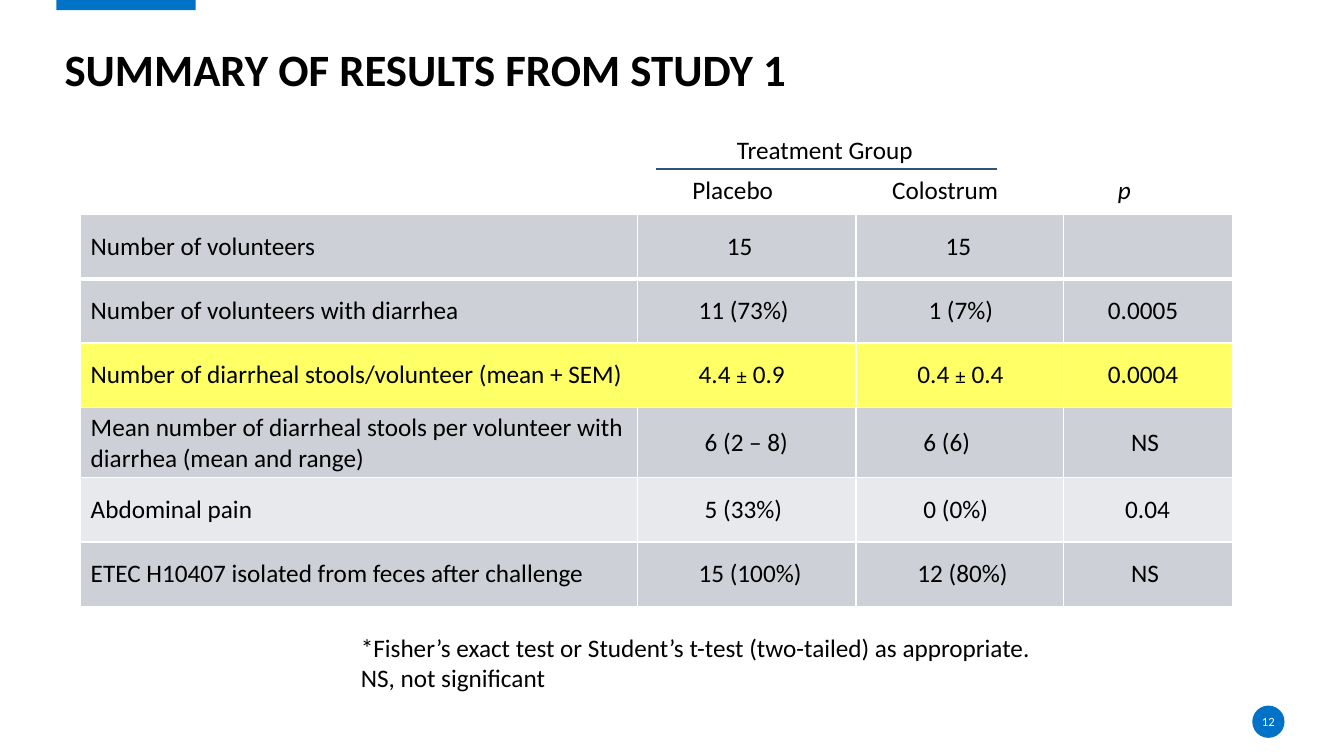
import pptx
import pptx.util
import pptx.dml.color
import pptx.oxml
import pptx.oxml.ns
import pptx.enum.shapes
import pptx.enum.text
from lxml import etree

SCALE = 9144  # EMU in one px, 100 px to the inch
BLUE, WHITE, BLACK = "0072C7", "FFFFFF", "000000"
GREY, PALE, YELLOW = "CDD1D7", "E8E9EC", "FFFF66"
MID = pptx.enum.text.MSO_ANCHOR.MIDDLE
TOP = pptx.enum.text.MSO_ANCHOR.TOP
SHAPE = pptx.enum.shapes.MSO_SHAPE


def px(*vals):
    return [pptx.util.Emu(val * SCALE) for val in vals]


def color(code):
    return pptx.dml.color.RGBColor.from_string(code)


def sub(parent, tag, **attrs):
    return etree.SubElement(parent, pptx.oxml.ns.qn(tag), attrs)


class Deck:
    face = "Calibri"
    size = 18

    def __init__(self, wide, high):
        self.prs = pptx.Presentation()
        self.prs.slide_width, self.prs.slide_height = px(wide, high)
        self.slide = self.prs.slides.add_slide(self.prs.slide_layouts[6])
        self.shapes = self.slide.shapes

    def style(self, font, size=None, ink=BLACK, bold=False):
        font.name, font.size = self.face, pptx.util.Pt(size or self.size)
        font.color.rgb, font.bold = color(ink), bold

    def fill_para(self, para, text, tabs=(), **look):
        """Fill a paragraph; text is a string or a list of (string, font overrides)."""
        if tabs:
            stops = sub(para._p.get_or_add_pPr(), "a:tabLst")
            for stop in tabs:
                sub(stops, "a:tab", pos=str(stop * SCALE), algn="l")
        self.style(para.font, **look)
        for part, diff in [(text, {})] if isinstance(text, str) else text:
            run = para.add_run()
            run.text = part
            if "size" in diff:
                run.font.size = pptx.util.Pt(diff["size"])
            if "name" in diff:
                run.font.name = diff["name"]
            run.font.bold = diff.get("bold")
            run.font.italic = diff.get("italic")

    def text(self, box, lines, inset=(10, 5), anchor=TOP, tabs=(), **look):
        frame = self.shapes.add_textbox(*px(*box)).text_frame
        frame.word_wrap, frame.vertical_anchor = True, anchor
        frame.margin_left = frame.margin_right = px(inset[0])[0]
        frame.margin_top = frame.margin_bottom = px(inset[1])[0]
        for num, line in enumerate(lines):
            para = frame.add_paragraph() if num else frame.paragraphs[0]
            self.fill_para(para, line, tabs, **look)
        return frame

    def shape(self, kind, box, fill):
        item = self.shapes.add_shape(kind, *px(*box))
        item.shadow.inherit = False
        item.fill.solid()
        item.fill.fore_color.rgb = color(fill)
        item.line.fill.background()
        return item

    def badge(self, box, text, size):
        frame = self.shape(SHAPE.OVAL, box, BLUE).text_frame
        frame.margin_left = frame.margin_right = 0
        frame.margin_top = frame.margin_bottom = 0
        frame.word_wrap, frame.vertical_anchor = True, MID
        frame.paragraphs[0].alignment = pptx.enum.text.PP_ALIGN.CENTER
        self.fill_para(frame.paragraphs[0], text, size=size, ink=WHITE)

    def line(self, ends, ink, width):
        kind = pptx.enum.shapes.MSO_CONNECTOR.STRAIGHT
        rule = self.shapes.add_connector(kind, *px(*ends))
        rule.line.color.rgb, rule.line.width = color(ink), pptx.util.Pt(width)
        sub(rule._element.spPr, "a:effectLst")

    def border(self, cell, **widths):
        """Draw white cell edges; widths are points for L, R, T and B."""
        props = cell._tc.get_or_add_tcPr()
        for num, side in enumerate("LRTB"):
            wide = pptx.util.Pt(widths.get(side, 1))
            edge = pptx.oxml.parse_xml(
                f'<a:ln{side} {pptx.oxml.ns.nsdecls("a")} w="{wide}"><a:solidFill>'
                f'<a:srgbClr val="{WHITE}"/></a:solidFill></a:ln{side}>')
            props.insert(num, edge)

    def table(self, box, cols, rows):
        """Rows hold a fill and cells of (indent in px, text)."""
        grid = self.shapes.add_table(len(rows), len(cols), *px(*box)).table
        grid.first_row = grid.horz_banding = False
        for col, wide in zip(grid.columns, px(*cols)):
            col.width = wide
        for r, (fill, cells) in enumerate(rows):
            for c, (indent, text) in enumerate(cells):
                cell = grid.cell(r, c)
                cell.vertical_anchor = MID
                cell.margin_left = px(10 + indent)[0]
                cell.fill.solid()
                cell.fill.fore_color.rgb = color(fill)
                self.border(cell, **({"B": 3} if r == 0 else {"T": 3} if r == 1 else {}))
                self.fill_para(cell.text_frame.paragraphs[0], text)


def spread(mean, error):
    sign = {"size": 14, "name": "Times New Roman", "bold": True}
    return [(mean + " ", {}), ("±", sign), (" " + error, {})]


ROWS = [
    (GREY, [(0, "Number of volunteers"), (79, "15"), (79, "15"), (0, [])]),
    (GREY, [(0, "Number of volunteers with diarrhea"),
            (51, "11 (73%)"), (62, "1 (7%)"), (34, "0.0005")]),
    (YELLOW, [(0, "Number of diarrheal stools/volunteer (mean + SEM)"),
              (51, spread("4.4", "0.9")), (51, spread("0.4", "0.4")), (34, "0.0004")]),
    (GREY, [(0, "Mean number of diarrheal stools per volunteer with "
                "diarrhea (mean and range)"),
            (57, "6 (2 – 8)"), (57, "6 (6)"), (57, "NS")]),
    (PALE, [(0, "Abdominal pain"), (57, "5 (33%)"), (57, "0 (0%)"), (51, "0.04")]),
    (GREY, [(0, "ETEC H10407 isolated from feces after challenge"),
            (51, "15 (100%)"), (51, "12 (80%)"), (57, "NS")]),
]


def main():
    deck = Deck(1333, 750)
    deck.badge((1242, 700, 32, 32), "12", 9)
    deck.shape(SHAPE.RECTANGLE, (56, 0, 138, 10), BLUE)
    title = deck.text((64, 33, 1128, 76), ["SUMMARY OF RESULTS FROM STUDY 1"],
                      inset=(0, 0), anchor=MID, size=32, bold=True)
    title.paragraphs[0].line_spacing = 0.9
    deck.table((80, 213, 1142, 382), (552, 217, 206, 168), ROWS)
    deck.text((637, 128, 376, 40), ["\tTreatment Group"], tabs=[84])
    heads = [("\tPlacebo\tColostrum\t", {}), ("p", {"italic": True})]
    deck.text((660, 168, 517, 40), [heads], tabs=[17, 215, 439])
    deck.line((651, 168, 989, 168), "2C567A", 1.5)
    deck.text((348, 622, 692, 71), [
        "*Fisher’s exact test or Student’s t-test (two-tailed) as appropriate.",
        "NS, not significant"])
    deck.prs.save("out.pptx")


if __name__ == "__main__":
    main()
